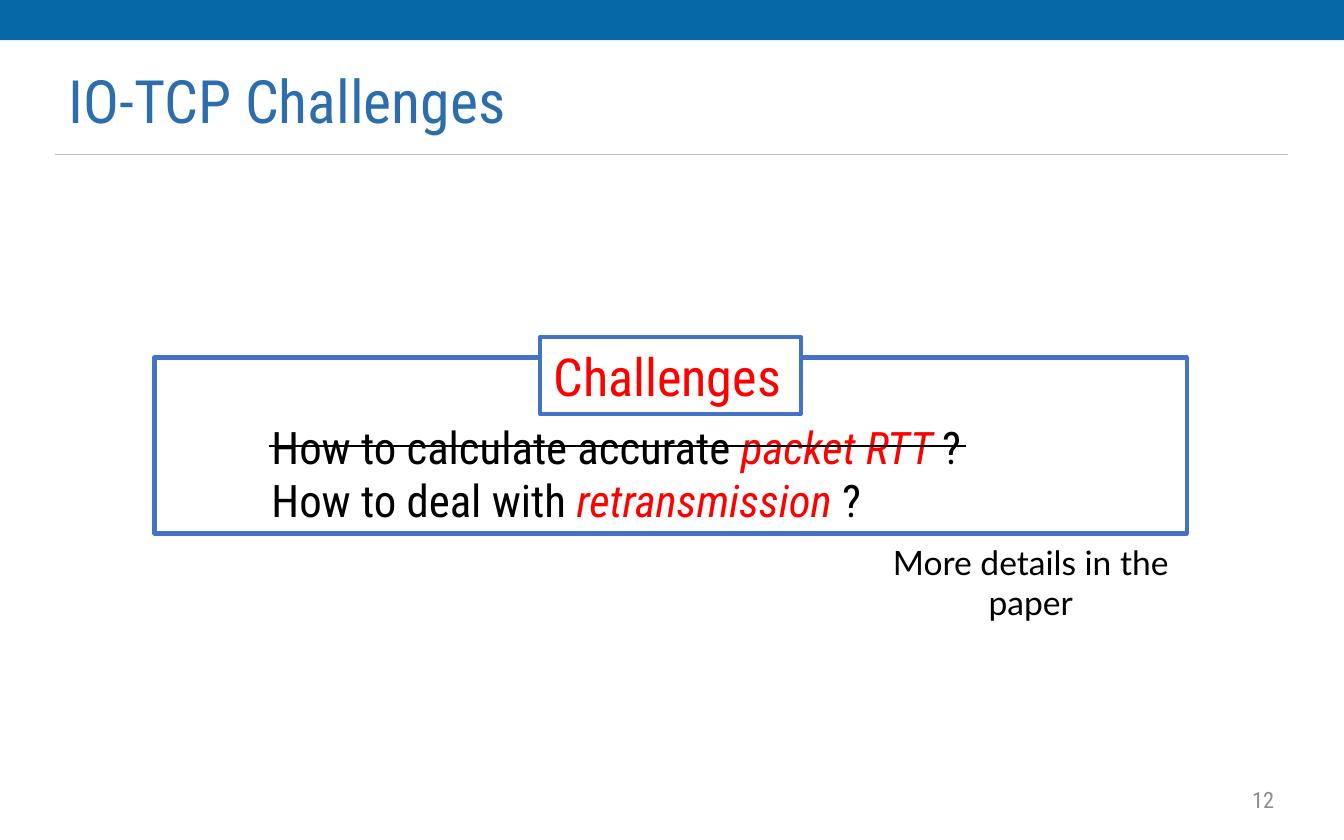
from lxml import etree
from pptx import Presentation
from pptx.dml.color import RGBColor
from pptx.enum.shapes import MSO_CONNECTOR, MSO_SHAPE
from pptx.enum.text import MSO_ANCHOR, PP_ALIGN
from pptx.oxml.ns import qn
from pptx.util import Inches, Pt

RECT, STRAIGHT = MSO_SHAPE.RECTANGLE, MSO_CONNECTOR.STRAIGHT
TOP, MIDDLE, BOTTOM = MSO_ANCHOR.TOP, MSO_ANCHOR.MIDDLE, MSO_ANCHOR.BOTTOM
LEFT, CENTER, RIGHT = PP_ALIGN.LEFT, PP_ALIGN.CENTER, PP_ALIGN.RIGHT

BAR = RGBColor(0x06, 0x69, 0xA6)
TITLE = RGBColor(0x2B, 0x6E, 0xAB)
RULE = RGBColor(0xBF, 0xBF, 0xBF)
FRAME = RGBColor(0x44, 0x72, 0xC4)
NUMBER = RGBColor(0x8C, 0x8C, 0x8C)
BLACK = RGBColor(0, 0, 0)
RED = RGBColor(0xFF, 0, 0)
WHITE = RGBColor(0xFF, 0xFF, 0xFF)
HEAD_FONT, NOTE_FONT = "Roboto Condensed", "Lato"

prs = Presentation()
prs.slide_width, prs.slide_height = Inches(10), Inches(6.25)
s = prs.slides.add_slide(prs.slide_layouts[5])
MARGIN, CONTENT_W = Inches(0.41), Inches(9.17)
RIGHT_EDGE = MARGIN + CONTENT_W


def write(sp, lines, size, align=LEFT, anchor=TOP, font=HEAD_FONT):
    """Fill a shape with lines, each a list of (text, colour, italic) runs."""
    tf = sp.text_frame
    tf.word_wrap, tf.vertical_anchor = True, anchor
    for i, runs in enumerate(lines):
        p = tf.paragraphs[0] if i == 0 else tf.add_paragraph()
        p.alignment = align
        for text, color, italic in runs:
            r = p.add_run()
            r.text = text
            r.font.color.rgb = color
            style = {"name": font, "size": Pt(size), "italic": italic}
            for name, value in style.items():
                setattr(r.font, name, value)


# Top bar and title
bar = s.shapes.add_shape(RECT, 0, 0, prs.slide_width, Inches(0.3))
bar.shadow.inherit = False
bar.fill.solid()
bar.fill.fore_color.rgb = BAR
bar.line.fill.background()

title = s.shapes.title
place = {"left": MARGIN, "top": Inches(0.4), "width": CONTENT_W, "height": Inches(0.75)}
for name, value in place.items():
    setattr(title, name, value)
write(title, [[("IO-TCP Challenges", TITLE, False)]], 32, anchor=MIDDLE)
title.text_frame.paragraphs[0].line_spacing = 0.9

# Challenge frame and its label
frame = s.shapes.add_shape(RECT, Inches(1.15), Inches(2.66), Inches(7.68), Inches(1.31))
label = s.shapes.add_shape(RECT, Inches(4.02), Inches(2.51), Inches(1.94), Inches(0.57))
for sp in (frame, label):
    sp.shadow.inherit = False
    sp.line.color.rgb = FRAME
    sp.line.width = Pt(2.25)
frame.fill.background()
label.fill.solid()
label.fill.fore_color.rgb = WHITE

frame.text_frame.margin_left = Inches(0.87)
questions = [("How to calculate accurate ", "packet RTT "),
             ("How to deal with ", "retransmission ")]
write(frame, [[(ask, BLACK, False), (topic, RED, True), ("?", BLACK, False)]
              for ask, topic in questions], 24, anchor=BOTTOM)
write(label, [[("Challenges", RED, False)]], 28)

# Title rule and strike through the first question
for x1, x2, y, color, width in [(MARGIN, RIGHT_EDGE, 1.15, RULE, 0.75),
                                (Inches(2), Inches(7.19), 3.32, BLACK, 1)]:
    line = s.shapes.add_connector(STRAIGHT, x1, Inches(y), x2, Inches(y))
    line.line.color.rgb = color
    line.line.width = Pt(width)
    etree.SubElement(line._element.spPr, qn("a:effectLst"))

# Note and slide number
note = s.shapes.add_textbox(Inches(6.34), Inches(3.98), Inches(2.66), Inches(0.4))
write(note, [[("More details in the paper", BLACK, False)]], 18, CENTER, font=NOTE_FONT)

num_w = Inches(2.25)
number = s.shapes.add_textbox(RIGHT_EDGE - num_w, Inches(5.8), num_w, Inches(0.3))
write(number, [[("12", NUMBER, False)]], 12, RIGHT, MIDDLE)

prs.save("out.pptx")
